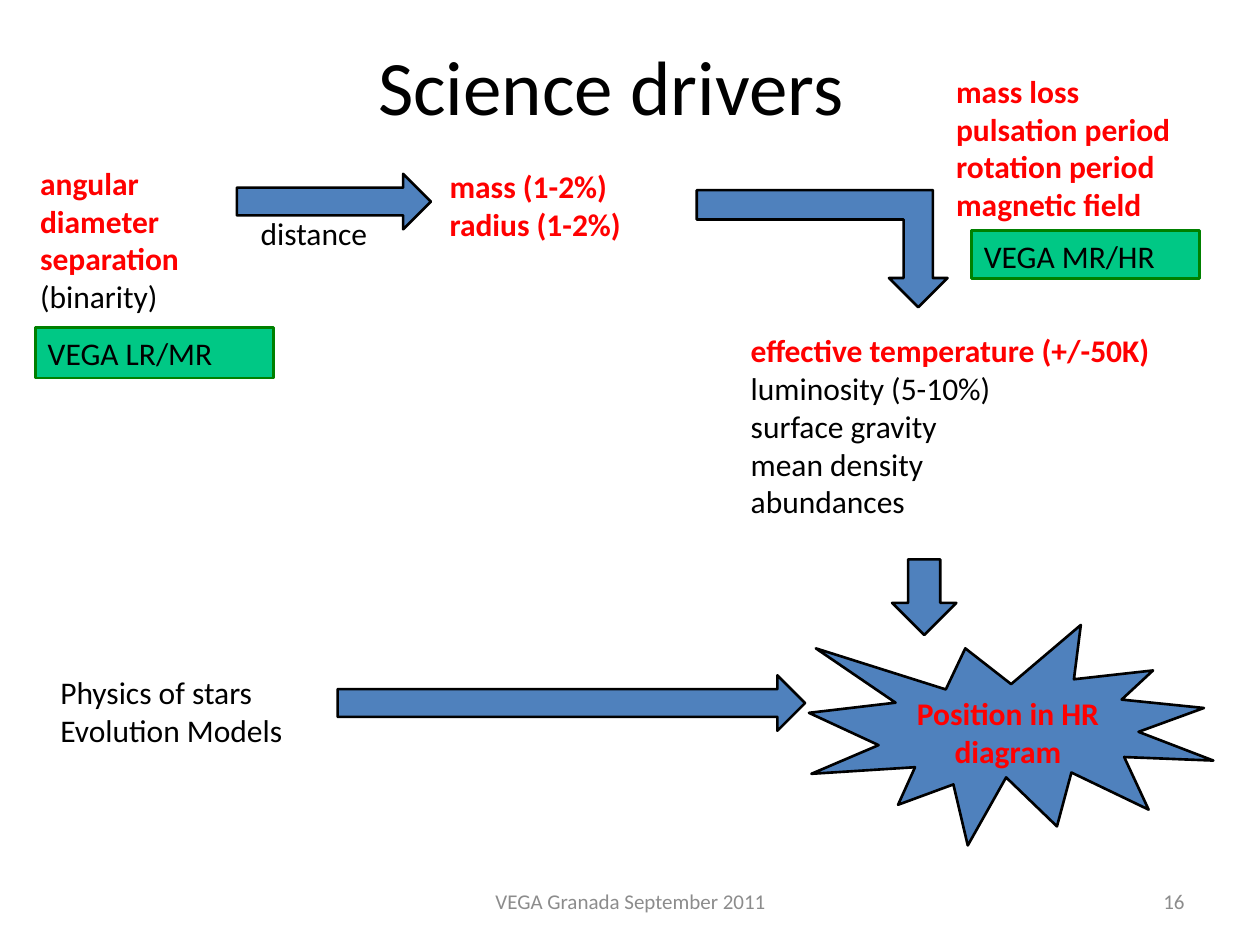
from pptx import Presentation
from pptx.dml.color import RGBColor
from pptx.enum.shapes import MSO_SHAPE
from pptx.enum.text import MSO_ANCHOR, PP_ALIGN
from pptx.util import Inches, Pt

COLS, ROWS = 100, 75
WIDTH, HEIGHT = Inches(10), Inches(7.5)

BLACK = RGBColor(0x00, 0x00, 0x00)
RED = RGBColor(0xFF, 0x00, 0x00)
BLUE = RGBColor(0x4F, 0x81, 0xBD)
GREEN = RGBColor(0x00, 0xC8, 0x85)
DARK_GREEN = RGBColor(0x00, 0x80, 0x00)
GREY = RGBColor(0x8C, 0x8C, 0x8C)


def place(col, row, cols, rows):
    """Turn grid columns and rows into slide lengths."""
    return (int(WIDTH * col / COLS), int(HEIGHT * row / ROWS),
            int(WIDTH * cols / COLS), int(HEIGHT * rows / ROWS))


def style(font, color, bold=False, size=18):
    font.name = "Calibri"
    font.size = Pt(size)
    font.bold = bold
    font.color.rgb = color


def write(tf, lines, color=BLACK, bold=False, size=18, align=PP_ALIGN.LEFT):
    for i, line in enumerate(lines):
        p = tf.paragraphs[0] if i == 0 else tf.add_paragraph()
        p.alignment = align
        p.add_run().text = line
        style(p.font, color, bold, size)


def add_text(slide, box, lines, anchor=MSO_ANCHOR.TOP, wrap=True, **look):
    tf = slide.shapes.add_textbox(*place(*box)).text_frame
    tf.word_wrap = wrap
    tf.vertical_anchor = anchor
    write(tf, lines, **look)
    return tf


def add_key_text(slide, box, lines, **look):
    return add_text(slide, box, lines, color=RED, bold=True, **look)


def add_block(slide, kind, box, fill=BLUE, line=BLACK):
    sp = slide.shapes.add_shape(kind, *place(*box))
    sp.shadow.inherit = False
    sp.fill.solid()
    sp.fill.fore_color.rgb = fill
    sp.line.color.rgb = line
    sp.line.width = Pt(1.5)
    return sp


def add_label(slide, box, text):
    sp = add_block(slide, MSO_SHAPE.FLOWCHART_PROCESS, box, GREEN, DARK_GREEN)
    sp.text_frame.vertical_anchor = MSO_ANCHOR.TOP
    write(sp.text_frame, [text])


def add_footer(slide, col, cols, text, align):
    add_text(slide, (col, 69.5, cols, 4), [text], MSO_ANCHOR.MIDDLE,
             color=GREY, size=12, align=align)


def main():
    prs = Presentation()
    prs.slide_width, prs.slide_height = WIDTH, HEIGHT
    slide = prs.slides.add_slide(prs.slide_layouts[6])

    add_block(slide, MSO_SHAPE.EXPLOSION1, (64.2, 49.6, 32.1, 17.5))
    add_text(slide, (10.8, 1.7, 75.4, 10), ["Science drivers"],
             MSO_ANCHOR.MIDDLE, size=44, align=PP_ALIGN.CENTER)

    add_text(slide, (3.8, 52.9, 22.8, 7.1),
             ["Physics of stars", "Evolution Models"])
    add_key_text(slide, (34.7, 12.8, 26.4, 7.1),
                 ["mass (1-2%)", "radius (1-2%)"])
    parameters = add_text(slide, (58.6, 25.8, 39.3, 16.2),
                          ["effective temperature (+/-50K)",
                           "luminosity (5-10%)", "surface gravity",
                           "mean density", "abundances"])
    style(parameters.paragraphs[0].font, RED, bold=True)
    add_key_text(slide, (74.9, 5.2, 21.7, 13.1),
                 ["mass loss", "pulsation period", "rotation period",
                  "magnetic field"])
    add_key_text(slide, (68.6, 54.6, 22.8, 7.1),
                 ["Position in HR diagram"], align=PP_ALIGN.CENTER)

    add_block(slide, MSO_SHAPE.DOWN_ARROW, (70.8, 44.4, 5.1, 6))
    add_block(slide, MSO_SHAPE.RIGHT_ARROW, (26.8, 53.6, 37.1, 4.4))

    observables = add_key_text(slide, (2.2, 12.5, 19.2, 13.1),
                               ["angular diameter", "separation"])
    r = observables.paragraphs[1].add_run()
    r.text = " (binarity)"
    style(r.font, BLACK)

    add_block(slide, MSO_SHAPE.RIGHT_ARROW, (18.8, 13.8, 15.4, 4.4))
    add_text(slide, (19.7, 16.5, 11.4, 4), ["distance"], wrap=False)
    bent = add_block(slide, MSO_SHAPE.BENT_UP_ARROW, (55.3, 15.1, 19.9, 9.3))
    bent._element.spPr.xfrm.set("flipV", "1")

    add_label(slide, (2.8, 26, 18.9, 4), "VEGA LR/MR")
    add_label(slide, (77.1, 18.3, 18.1, 3.8), "VEGA MR/HR")

    add_footer(slide, 71.7, 23.3, "16", PP_ALIGN.RIGHT)
    add_footer(slide, 34.2, 31.7, "VEGA Granada September 2011",
               PP_ALIGN.CENTER)

    prs.save("out.pptx")


if __name__ == "__main__":
    main()
